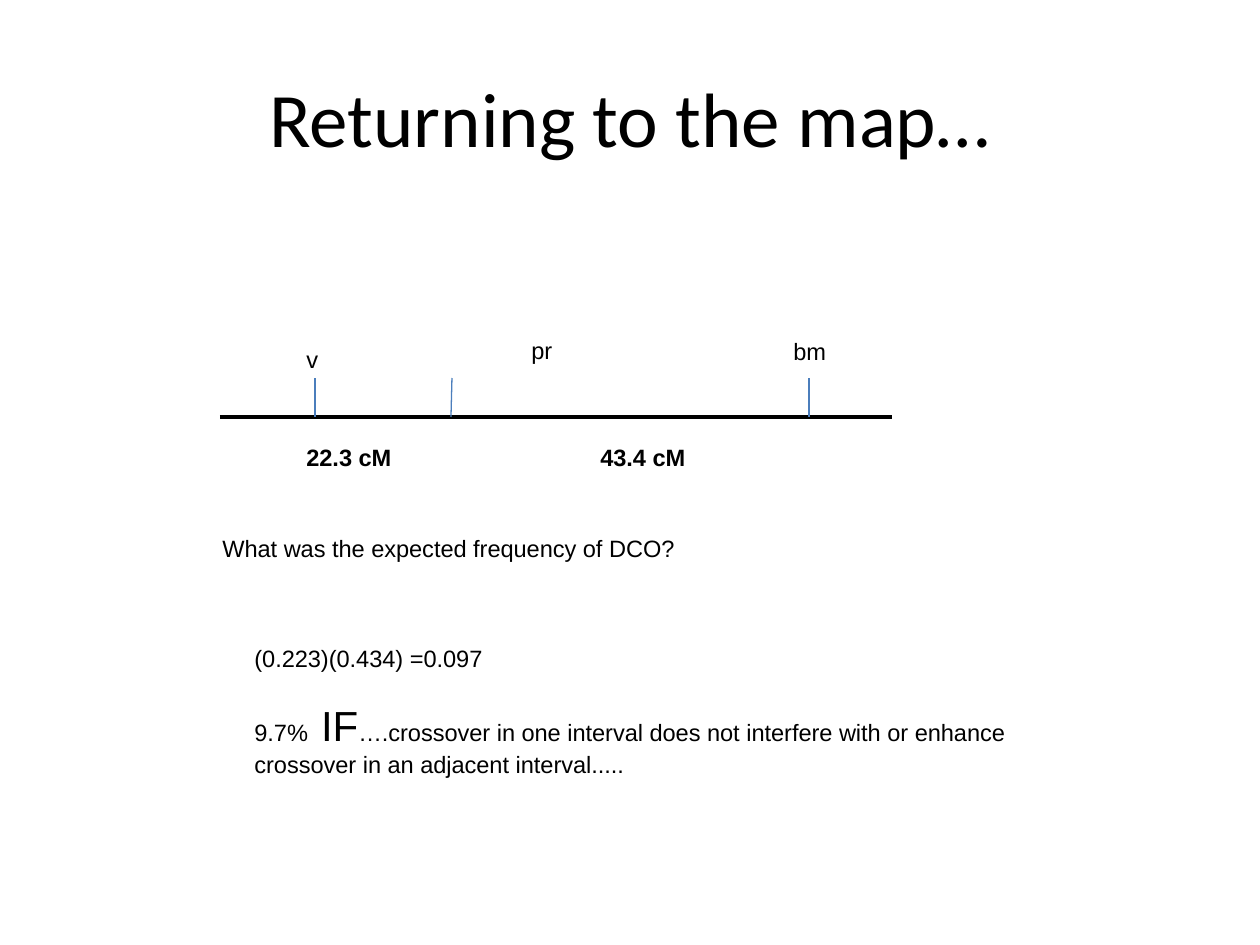
from pptx import Presentation
from pptx.dml.color import RGBColor
from pptx.enum.shapes import MSO_CONNECTOR as Connector
from pptx.enum.text import MSO_ANCHOR as Anchor, PP_ALIGN as Align
from pptx.oxml.ns import qn
from pptx.util import Emu, Pt
from lxml.etree import SubElement

EMU_PER_PX = 914400 / 126


def px(length):
    """Turn whole pixels into EMU."""
    return Emu(round(length * EMU_PER_PX))


def color(hex_value):
    """Turn a hex string into a colour."""
    return RGBColor.from_string(hex_value)


class MapSlide:
    """Hold the style and the current slide of the gene map."""

    ink = "000000"
    tick = "4B7EBC"
    body = {"name": "Arial", "size": Pt(13.5)}
    bold = {**body, "bold": True}
    strong = {**body, "size": Pt(24)}
    heading = {"name": "Calibri", "size": Pt(44)}

    def __init__(self, deck):
        """Add a blank slide to the deck."""
        self.slide = deck.slides.add_slide(deck.slide_layouts[6])

    def line(self, start, end, hex_value, width):
        """Draw a straight line between two points."""
        ends = [px(value) for value in (*start, *end)]
        stroke = self.slide.shapes.add_connector(Connector.STRAIGHT, *ends)
        stroke.line.color.rgb = color(hex_value)
        stroke.line.width = Pt(width)
        SubElement(stroke._element.spPr, qn("a:effectLst"))

    def text(self, box, paragraphs, wrap=True, anchor=Anchor.TOP, **layout):
        """Write paragraphs, each a list of (words, format) runs."""
        frame = self.slide.shapes.add_textbox(*map(px, box)).text_frame
        frame.word_wrap = wrap
        frame.vertical_anchor = anchor
        for index, runs in enumerate(paragraphs):
            paragraph = frame.paragraphs[0] if index == 0 else frame.add_paragraph()
            for name, value in layout.items():
                setattr(paragraph, name, value)
            for words, style in runs:
                run = paragraph.add_run()
                run.text = words
                run.font.color.rgb = color(self.ink)
                for name, value in style.items():
                    setattr(run.font, name, value)


def main():
    """Build the slide and save it."""
    deck = Presentation()
    deck.slide_width, deck.slide_height = px(1260), px(945)
    gene_map = MapSlide(deck)
    body = gene_map.body

    gene_map.text((63, 38, 1134, 157), [[("Returning to the map…", gene_map.heading)]],
                  anchor=Anchor.MIDDLE, alignment=Align.CENTER)

    chromosome_y = 417
    gene_map.line((220, chromosome_y), (892, chromosome_y), gene_map.ink, 2.25)
    for top_x, foot_x in ((315, 315), (452, 451), (809, 809)):
        gene_map.line((top_x, 378), (foot_x, chromosome_y), gene_map.tick, 0.75)

    for gene, left, top, width, wrap in (("v", 294, 339, 63, True),
                                         ("pr", 519, 330, 47, False),
                                         ("bm", 781, 331, 59, False)):
        gene_map.text((left, top, width, 42), [[(gene, body)]], wrap)

    for distance, left in (("22.3 cM", 294), ("43.4 cM", 588)):
        gene_map.text((left, 437, 252, 42), [[(distance, gene_map.bold)]])

    gene_map.text((210, 528, 714, 42),
                  [[("What was the expected frequency of DCO?", body)]])
    gene_map.text((242, 638, 777, 150), [
        [("(0.223)(0.434) =0.097", body)],
        [("9.7%  ", body), ("IF", gene_map.strong),
         ("….crossover in one interval does not interfere with or enhance "
          "crossover in an adjacent interval.....", body)],
    ], space_before=Pt(15.5))

    deck.save("out.pptx")


if __name__ == "__main__":
    main()
